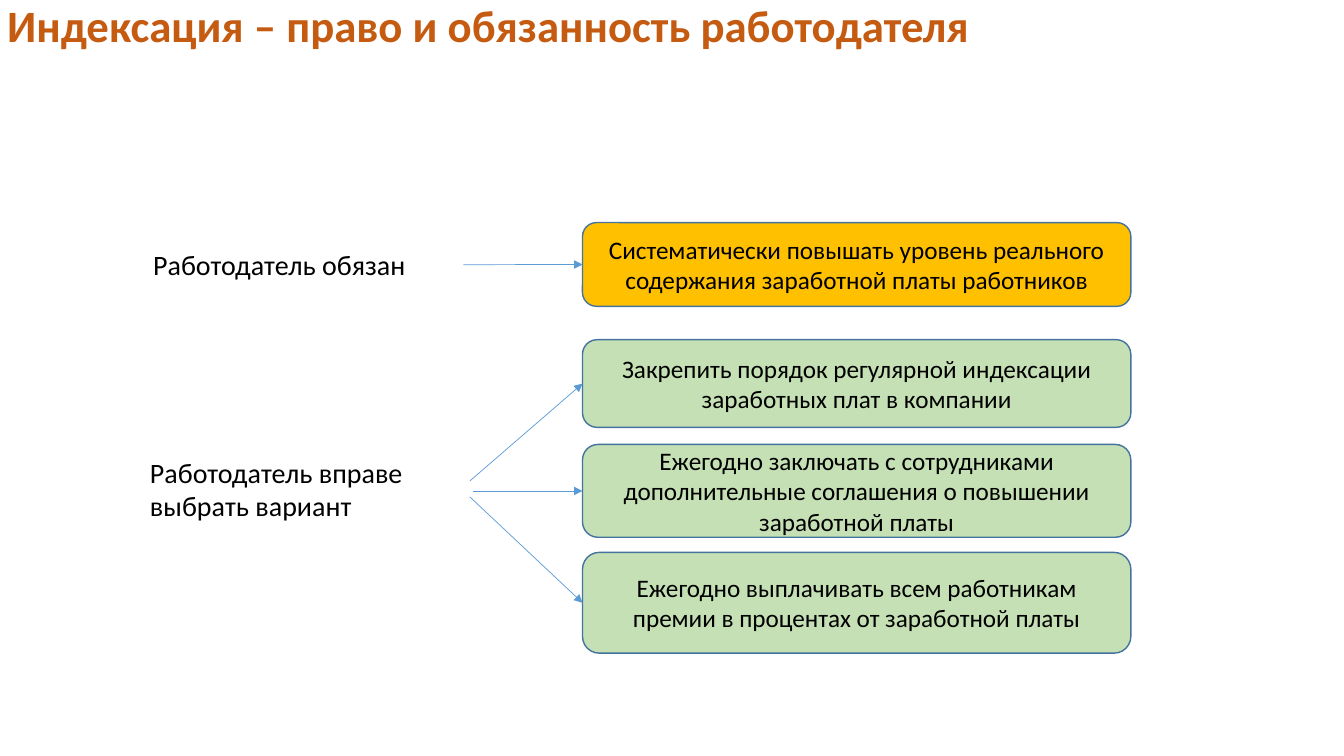
"""Builds the slide on wage indexation as an employer's right and duty."""
from dataclasses import dataclass

from lxml import etree
from pptx import Presentation
from pptx.dml.color import RGBColor
from pptx.enum.shapes import MSO_CONNECTOR, MSO_SHAPE
from pptx.enum.text import MSO_ANCHOR, MSO_AUTO_SIZE, PP_ALIGN
from pptx.oxml.ns import qn
from pptx.slide import Slide
from pptx.text.text import TextFrame
from pptx.util import Cm, Pt

ROUNDED = MSO_SHAPE.ROUNDED_RECTANGLE
STRAIGHT = MSO_CONNECTOR.STRAIGHT
TOP, MIDDLE = MSO_ANCHOR.TOP, MSO_ANCHOR.MIDDLE
LEFT, CENTER = PP_ALIGN.LEFT, PP_ALIGN.CENTER
FIXED = MSO_AUTO_SIZE.NONE
TITLE_ONLY = 5


@dataclass(frozen=True)
class Theme:
    font: str = "Calibri"
    title_size: int = 32
    label_size: int = 20
    box_size: int = 18
    title: str = "C55A11"
    text: str = "000000"
    duty: str = "FFC000"
    option: str = "C5E0B4"
    outline: str = "43739E"
    arrow: str = "5B9BD5"


@dataclass(frozen=True)
class Label:
    lines: tuple[str, ...]
    left: float
    top: float
    width: float
    height: float


@dataclass(frozen=True)
class Action:
    text: str
    fill: str
    top: float
    height: float
    arrow_left: float
    arrow_top: float


THEME = Theme()
PAGE_WIDTH, PAGE_HEIGHT = 33.87, 19.05
TITLE = "Индексация – право и обязанность работодателя"
TITLE_HEIGHT = 1.93
BOX_LEFT, BOX_WIDTH = 14.68, 13.82
LABELS = (
    Label(("Работодатель обязан",), 3.61, 6.1, 6.93, 1.12),
    Label(("Работодатель вправе", "выбрать вариант"), 3.53, 11.35, 7.09, 1.96),
)
ACTIONS = (
    Action("Систематически повышать уровень реального содержания заработной платы работников",
           THEME.duty, 5.61, 2.11, 11.68, 6.67),
    Action("Закрепить порядок регулярной индексации заработных плат в компании",
           THEME.option, 8.56, 2.21, 11.84, 12.12),
    Action("Ежегодно заключать с сотрудниками дополнительные соглашения о повышении заработной платы",
           THEME.option, 11.2, 2.34, 11.91, 12.37),
    Action("Ежегодно выплачивать всем работникам премии в процентах от заработной платы",
           THEME.option, 13.92, 2.54, 11.84, 12.52),
)


def write(frame: TextFrame, *lines: str, size: int, color: str = THEME.text,
          bold: bool = False, align: PP_ALIGN = LEFT, anchor: MSO_ANCHOR = TOP,
          wrap: bool = True, spacing: float = 1.0) -> None:
    """Fill a text frame with one formatted paragraph per line."""
    frame.auto_size = FIXED
    frame.word_wrap = wrap
    frame.vertical_anchor = anchor
    for index, line in enumerate(lines):
        para = frame.add_paragraph() if index else frame.paragraphs[0]
        para.alignment = align
        para.line_spacing = spacing
        span = para.add_run()
        span.text = line
        span.font.name = THEME.font
        span.font.size = Pt(size)
        span.font.bold = bold
        span.font.color.rgb = RGBColor.from_string(color)


def add_title(page: Slide) -> None:
    """Move the title placeholder to the top edge and fill it."""
    title = page.shapes.title
    title.left, title.top = Cm(0), Cm(0)
    title.width, title.height = Cm(PAGE_WIDTH), Cm(TITLE_HEIGHT)
    frame = title.text_frame
    frame.margin_left = frame.margin_right = Cm(0.18)
    frame.margin_top = frame.margin_bottom = Cm(0.1)
    write(frame, TITLE, size=THEME.title_size, color=THEME.title, bold=True, spacing=0.9)


def add_label(page: Slide, label: Label) -> None:
    """Add the plain text that introduces a group of actions."""
    box = page.shapes.add_textbox(Cm(label.left), Cm(label.top),
                                  Cm(label.width), Cm(label.height))
    write(box.text_frame, *label.lines, size=THEME.label_size, wrap=False)


def add_arrow(page: Slide, action: Action) -> None:
    """Draw the arrow that ends at the middle of an action's left side."""
    arrow = page.shapes.add_connector(
        STRAIGHT, Cm(action.arrow_left), Cm(action.arrow_top),
        Cm(BOX_LEFT), Cm(action.top + action.height / 2))
    arrow.line.color.rgb = RGBColor.from_string(THEME.arrow)
    arrow.line.width = Pt(0.5)
    properties = arrow.line._get_or_add_ln()
    etree.SubElement(properties, qn("a:tailEnd"), type="triangle")
    etree.SubElement(properties.getparent(), qn("a:effectLst"))


def add_action(page: Slide, action: Action) -> None:
    """Add an action's rounded box and its arrow."""
    box = page.shapes.add_shape(ROUNDED, Cm(BOX_LEFT), Cm(action.top),
                                Cm(BOX_WIDTH), Cm(action.height))
    box.shadow.inherit = False
    box.fill.solid()
    box.fill.fore_color.rgb = RGBColor.from_string(action.fill)
    box.line.color.rgb = RGBColor.from_string(THEME.outline)
    box.line.width = Pt(1)
    write(box.text_frame, action.text, size=THEME.box_size, align=CENTER, anchor=MIDDLE)
    add_arrow(page, action)


def main() -> None:
    """Build the deck and save it."""
    deck = Presentation()
    deck.slide_width, deck.slide_height = Cm(PAGE_WIDTH), Cm(PAGE_HEIGHT)
    page = deck.slides.add_slide(deck.slide_layouts[TITLE_ONLY])
    add_title(page)
    for label in LABELS:
        add_label(page, label)
    for action in ACTIONS:
        add_action(page, action)
    deck.save("out.pptx")


if __name__ == "__main__":
    main()
